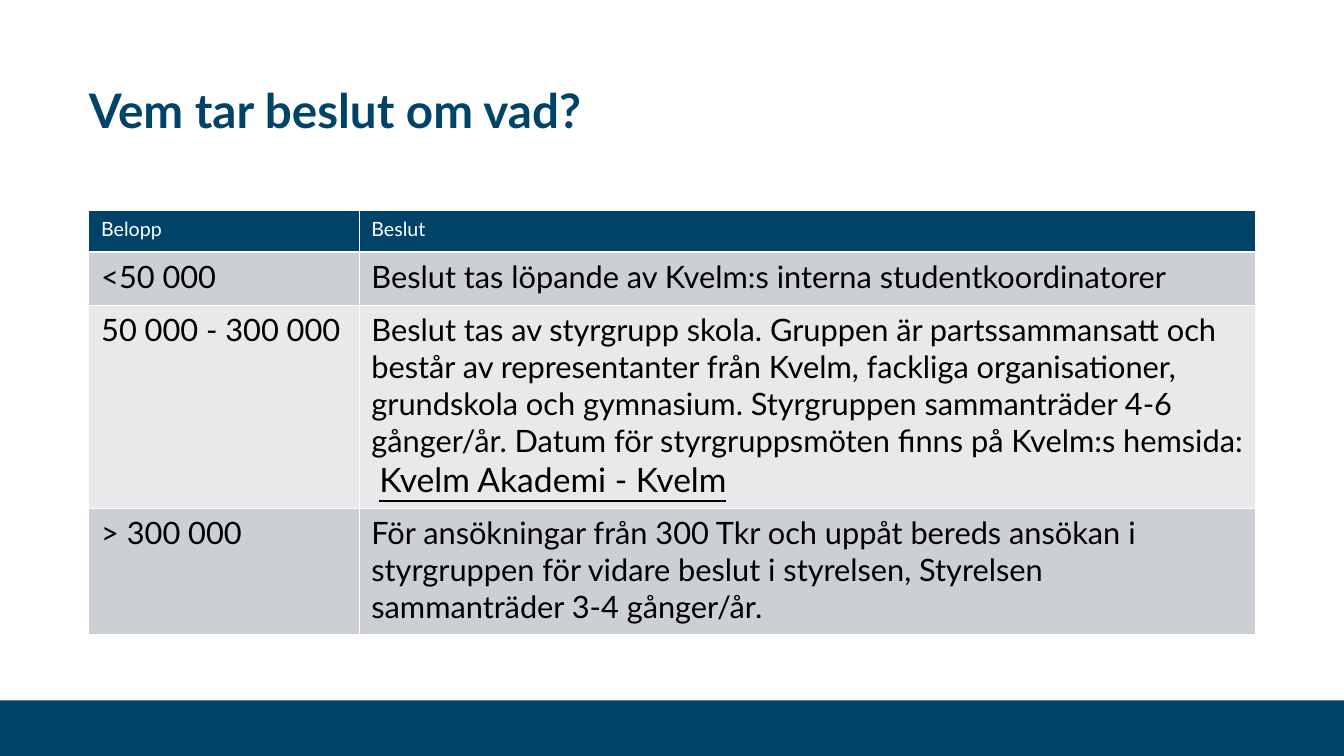
from lxml.etree import SubElement
from pptx import Presentation
from pptx.dml.color import RGBColor
from pptx.enum.shapes import MSO_SHAPE
from pptx.enum.text import MSO_ANCHOR, PP_ALIGN
from pptx.oxml.ns import qn
from pptx.util import Cm, Pt

NAVY = RGBColor(0x00, 0x43, 0x69)
WHITE = RGBColor(0xFF, 0xFF, 0xFF)
BLACK = RGBColor(0x00, 0x00, 0x00)
DARK_BAND = RGBColor(0xCC, 0xCF, 0xD4)
LIGHT_BAND = RGBColor(0xE7, 0xE9, 0xEB)

FONT = "Lato"
PAGE_WIDTH, PAGE_HEIGHT = Cm(33.87), Cm(19.05)
LEFT, CONTENT_WIDTH = Cm(2.24), Cm(29.4)
COLUMN_WIDTHS = [Cm(6.81), Cm(22.59)]
ROW_HEIGHTS = [Cm(1.04), Cm(1.35), Cm(5.11), Cm(3.18)]

LINK_TEXT = "Kvelm Akademi - Kvelm"
DECISIONS = [
    ("Belopp", "Beslut"),
    ("<50 000", "Beslut tas löpande av Kvelm:s interna studentkoordinatorer"),
    ("50 000 - 300 000",
     "Beslut tas av styrgrupp skola. Gruppen är partssammansatt och består av "
     "representanter från Kvelm, fackliga organisationer, grundskola och "
     "gymnasium. Styrgruppen sammanträder 4-6 gånger/år. Datum för "
     "styrgruppsmöten finns på Kvelm:s hemsida:  "),
    ("> 300 000",
     "För ansökningar från 300 Tkr och uppåt bereds ansökan i styrgruppen för "
     "vidare beslut i styrelsen, Styrelsen sammanträder 3-4 gånger/år."),
]


def style_span(span, size, color, bold=False, underline=False):
    span.font.name = FONT
    span.font.size = Pt(size)
    span.font.color.rgb = color
    span.font.bold = bold
    span.font.underline = underline


def add_footer_band(page):
    height = Cm(1.4)
    band = page.shapes.add_shape(
        MSO_SHAPE.RECTANGLE, 0, PAGE_HEIGHT - height, PAGE_WIDTH, height)
    band.shadow.inherit = False
    band.fill.solid()
    band.fill.fore_color.rgb = NAVY
    band.line.fill.background()


def add_title(page, text):
    box = page.shapes.add_textbox(LEFT, Cm(0.81), CONTENT_WIDTH, Cm(2.69))
    frame = box.text_frame
    frame.word_wrap = True
    frame.vertical_anchor = MSO_ANCHOR.BOTTOM
    frame.margin_left = frame.margin_right = 0
    frame.margin_top = frame.margin_bottom = 0
    frame.text = text
    paragraph = frame.paragraphs[0]
    paragraph.line_spacing = 0.9
    style_span(paragraph.runs[0], 34, NAVY, bold=True)


def add_cell_borders(cell):
    properties = cell._tc.get_or_add_tcPr()
    for side in ("lnL", "lnR", "lnT", "lnB"):
        line = SubElement(properties, qn(f"a:{side}"), w=str(Pt(1)))
        fill = SubElement(line, qn("a:solidFill"))
        SubElement(fill, qn("a:srgbClr"), val=str(WHITE))


def fill_cell(cell, text, background, size, color):
    add_cell_borders(cell)
    cell.fill.solid()
    cell.fill.fore_color.rgb = background
    cell.margin_left = cell.margin_right = Cm(0.31)
    cell.margin_top = cell.margin_bottom = Cm(0.15)
    cell.text_frame.text = text
    paragraph = cell.text_frame.paragraphs[0]
    paragraph.alignment = PP_ALIGN.LEFT
    style_span(paragraph.runs[0], size, color)


def add_decision_table(page):
    table = page.shapes.add_table(
        len(ROW_HEIGHTS), len(COLUMN_WIDTHS), LEFT, Cm(5.31),
        CONTENT_WIDTH, sum(ROW_HEIGHTS)).table
    for column, width in zip(table.columns, COLUMN_WIDTHS):
        column.width = width
    for index, (row, texts) in enumerate(zip(table.rows, DECISIONS)):
        row.height = ROW_HEIGHTS[index]
        if index == 0:
            look = (NAVY, 14, WHITE)
        else:
            look = (DARK_BAND if index % 2 else LIGHT_BAND, 22, BLACK)
        for cell, text in zip(row.cells, texts):
            fill_cell(cell, text, *look)

    # Underlined page name after the middle decision
    link = table.cell(2, 1).text_frame.paragraphs[0].add_run()
    link.text = LINK_TEXT
    style_span(link, 24, BLACK, underline=True)


def main():
    deck = Presentation()
    deck.slide_width, deck.slide_height = PAGE_WIDTH, PAGE_HEIGHT
    page = deck.slides.add_slide(deck.slide_layouts[6])
    add_footer_band(page)
    add_title(page, "Vem tar beslut om vad?")
    add_decision_table(page)
    deck.save("out.pptx")


if __name__ == "__main__":
    main()
